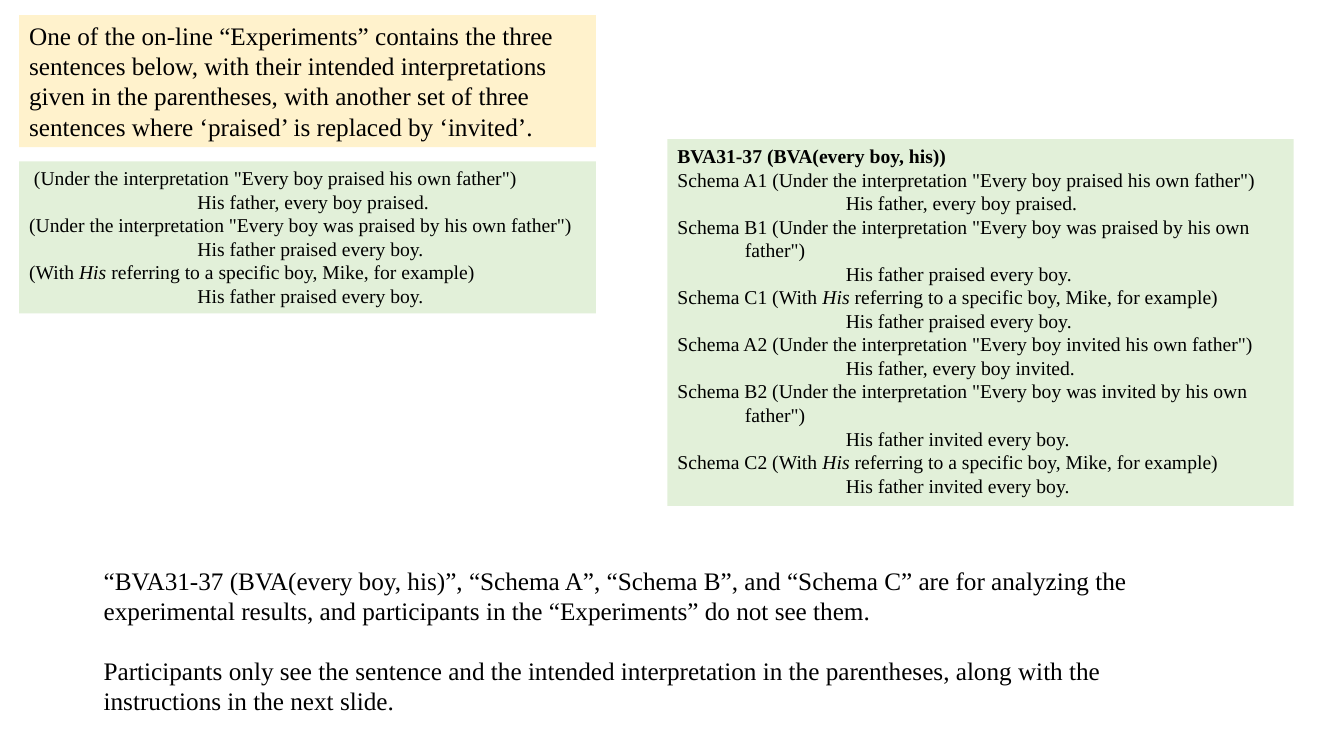
from dataclasses import dataclass

from pptx import Presentation
from pptx.dml.color import RGBColor
from pptx.enum.shapes import MSO_SHAPE
from pptx.enum.text import MSO_ANCHOR, MSO_AUTO_SIZE, PP_ALIGN
from pptx.util import Pt

EMU_PER_PX = 9144


@dataclass(frozen=True)
class Theme:
    font: str = "Times New Roman"
    ink: RGBColor = RGBColor(0, 0, 0)
    intro_fill: RGBColor = RGBColor(0xFF, 0xF2, 0xCC)
    schema_fill: RGBColor = RGBColor(0xE2, 0xF0, 0xD9)
    body_size: int = 18
    schema_size: int = 14
    remark_gap: int = 21


THEME = Theme()
HANGING_INDENT = 67
SENTENCE_INDENT = 167

INTRO = (
    "One of the on-line “Experiments” contains the three sentences below, "
    "with their intended interpretations given in the parentheses, with another set "
    "of three sentences where ‘praised’ is replaced by ‘invited’."
)
REMARKS = [
    "“BVA31-37 (BVA(every boy, his)”, “Schema A”, “Schema B”, and “Schema C” are for "
    "analyzing the experimental results, and participants in the “Experiments” "
    "do not see them.",
    "Participants only see the sentence and the intended interpretation in the "
    "parentheses, along with the instructions in the next slide.",
]
HEADING = "BVA31-37 (BVA(every boy, his))"


def px(length):
    return length * EMU_PER_PX


def schema_items(verb):
    return [
        (f'(Under the interpretation "Every boy {verb} his own father")',
         f"His father, every boy {verb}."),
        (f'(Under the interpretation "Every boy was {verb} by his own father")',
         f"His father {verb} every boy."),
        ("(With *His* referring to a specific boy, Mike, for example)",
         f"His father {verb} every boy."),
    ]


def format_span(span, size, bold=False, italic=False):
    span.font.name = THEME.font
    span.font.size = Pt(size)
    span.font.color.rgb = THEME.ink
    span.font.bold = bold
    span.font.italic = italic


def write_para(para, text, size, bold=False):
    para.alignment = PP_ALIGN.LEFT
    for index, part in enumerate(text.split("*")):
        span = para.add_run()
        span.text = part
        format_span(span, size, bold, italic=index % 2 == 1)


def indent_para(para, left, first_line):
    properties = para._p.get_or_add_pPr()
    properties.set("marL", str(px(left)))
    properties.set("indent", str(px(first_line)))


def next_para(frame):
    first = frame.paragraphs[0]
    return frame.add_paragraph() if first.runs else first


def prepare_frame(box):
    frame = box.text_frame
    frame.word_wrap = True
    frame.auto_size = MSO_AUTO_SIZE.SHAPE_TO_FIT_TEXT
    frame.vertical_anchor = MSO_ANCHOR.TOP
    return frame


def add_panel(page, left, top, width, height, fill):
    panel = page.shapes.add_shape(
        MSO_SHAPE.RECTANGLE, px(left), px(top), px(width), px(height))
    panel.shadow.inherit = False
    panel.fill.solid()
    panel.fill.fore_color.rgb = fill
    panel.line.fill.background()
    return prepare_frame(panel)


def write_item(frame, interpretation, sentence):
    para = next_para(frame)
    write_para(para, interpretation, THEME.schema_size)
    indent_para(para, HANGING_INDENT, -HANGING_INDENT)
    para = next_para(frame)
    write_para(para, sentence, THEME.schema_size)
    indent_para(para, SENTENCE_INDENT, 0)


def add_participant_panel(page):
    frame = add_panel(page, 19, 160, 572, 151, THEME.schema_fill)
    for index, (interpretation, sentence) in enumerate(schema_items("praised")):
        lead = " " if index == 0 else ""
        write_item(frame, lead + interpretation, sentence)


def add_intro_panel(page):
    frame = add_panel(page, 19, 15, 572, 131, THEME.intro_fill)
    write_para(next_para(frame), INTRO, THEME.body_size)


def add_analysis_panel(page):
    frame = add_panel(page, 662, 138, 621, 364, THEME.schema_fill)
    write_para(next_para(frame), HEADING, THEME.schema_size, bold=True)
    for number, verb in enumerate(("praised", "invited"), start=1):
        for letter, (interpretation, sentence) in zip("ABC", schema_items(verb)):
            write_item(frame, f"Schema {letter}{number} {interpretation}", sentence)


def add_remarks(page):
    box = page.shapes.add_textbox(px(93), px(556), px(1112), px(162))
    frame = prepare_frame(box)
    for remark in REMARKS:
        write_para(next_para(frame), remark, THEME.body_size)
    frame.paragraphs[0].space_after = Pt(THEME.remark_gap)


def main():
    deck = Presentation()
    deck.slide_width = px(1333)
    deck.slide_height = px(750)
    page = deck.slides.add_slide(deck.slide_layouts[6])
    add_participant_panel(page)
    add_intro_panel(page)
    add_remarks(page)
    add_analysis_panel(page)
    deck.save("out.pptx")


if __name__ == "__main__":
    main()
